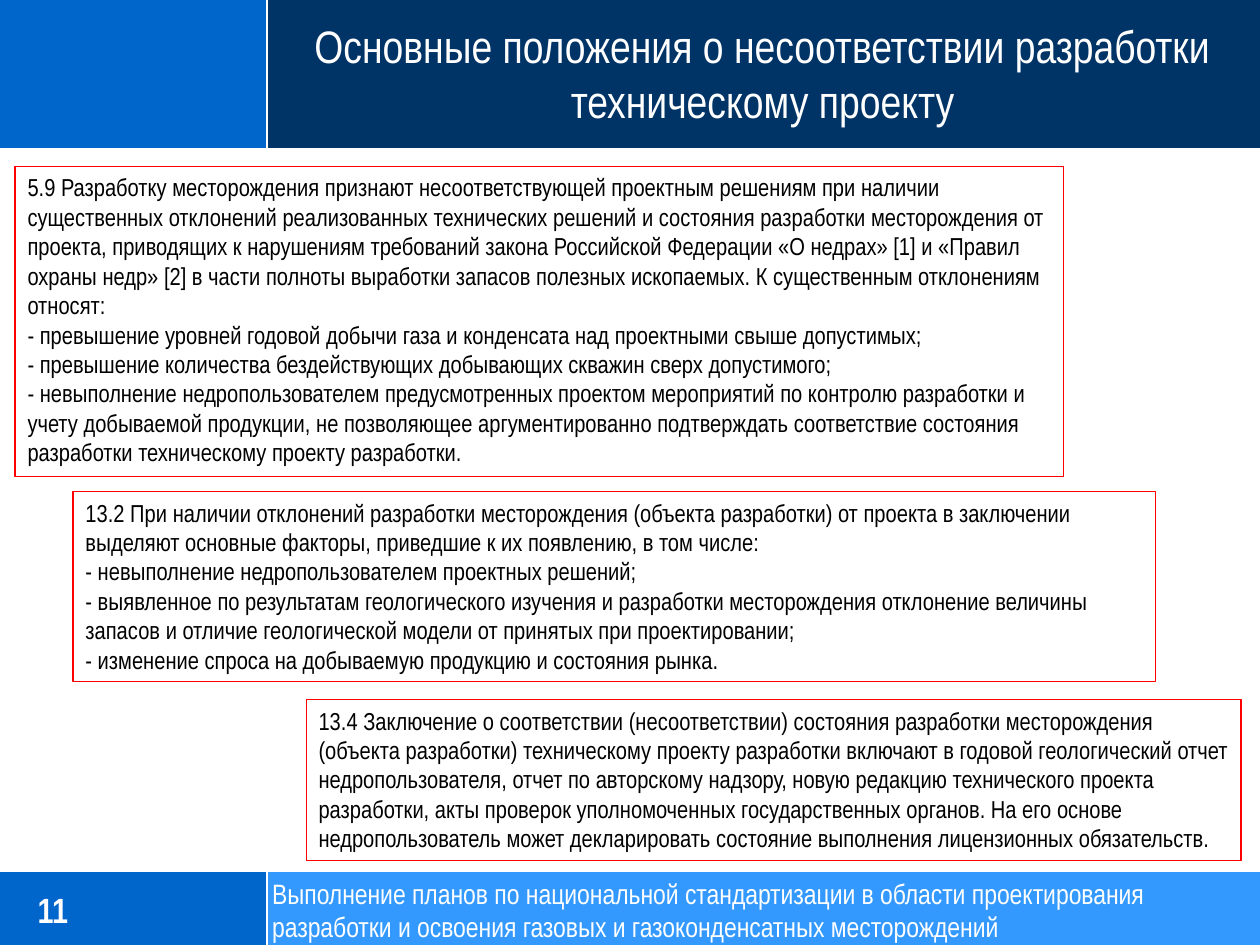
from lxml import etree
from pptx import Presentation
from pptx import util as u
from pptx.dml.color import RGBColor
from pptx.enum import shapes, text
from pptx.oxml import ns

WIDE, HIGH = 10, 7.5
SPLIT, TOP, FOOT = 2.12, 1.18, 6.91

NOTES = [
    ((0.12, 1.32, 8.32, 2.46), [
        "5.9 Разработку месторождения признают несоответствующей проектным решениям при наличии "
        "существенных отклонений реализованных технических решений и состояния разработки "
        "месторождения от проекта, приводящих к нарушениям требований закона Российской Федерации "
        "«О недрах» [1] и «Правил охраны недр» [2] в части полноты выработки запасов полезных "
        "ископаемых. К существенным отклонениям относят:",
        "- превышение уровней годовой добычи газа и конденсата над проектными свыше допустимых;",
        "- превышение количества бездействующих добывающих скважин сверх допустимого;",
        "- невыполнение недропользователем предусмотренных проектом мероприятий по контролю "
        "разработки и учету добываемой продукции, не позволяющее аргументированно подтверждать "
        "соответствие состояния разработки техническому проекту разработки.",
    ]),
    ((0.58, 3.9, 8.59, 1.51), [
        "13.2 При наличии отклонений разработки месторождения (объекта разработки) от проекта в "
        "заключении выделяют основные факторы, приведшие к их появлению, в том числе:",
        "- невыполнение недропользователем проектных решений;",
        "- выявленное по результатам геологического изучения и разработки месторождения отклонение "
        "величины запасов и отличие геологической модели от принятых при проектировании;",
        "- изменение спроса на добываемую продукцию и состояния рынка.",
    ]),
    ((2.43, 5.55, 7.42, 1.28), [
        "13.4 Заключение о соответствии (несоответствии) состояния разработки месторождения "
        "(объекта разработки) техническому проекту разработки включают в годовой геологический "
        "отчет недропользователя, отчет по авторскому надзору, новую редакцию технического проекта "
        "разработки, акты проверок уполномоченных государственных органов. На его основе "
        "недропользователь может декларировать состояние выполнения лицензионных обязательств.",
    ]),
]


def paint(part, tint):
    part.solid()
    part.fore_color.rgb = RGBColor.from_string(tint)


def write(shape, *lines, font="Arial Narrow", size=14, tint="000000", bold=False,
          align="LEFT", anchor="MIDDLE", inset=(0, 0)):
    frame = shape.text_frame
    frame.word_wrap = True
    frame.auto_size = text.MSO_AUTO_SIZE.NONE
    frame.vertical_anchor = text.MSO_ANCHOR[anchor]
    frame.margin_left = frame.margin_right = u.Inches(inset[0])
    frame.margin_top = frame.margin_bottom = u.Inches(inset[1])
    for n, line in enumerate(lines):
        para = frame.add_paragraph() if n else frame.paragraphs[0]
        para.alignment = text.PP_ALIGN[align]
        run = para.add_run()
        run.text = line
        run.font.name, run.font.size, run.font.bold = font, u.Pt(size), bold
        paint(run.font.fill, tint)


class Page:
    """Holds the style and the current slide, and adds its elements."""

    white, navy, blue, sky, red = "FFFFFF", "003366", "0066CC", "3399FF", "FF0000"

    def __init__(self, deck):
        self.slide = deck.slides.add_slide(deck.slide_layouts[5])
        self.items = self.slide.shapes
        paint(self.slide.background.fill, self.white)

    def rect(self, *box):
        shape = self.items.add_shape(shapes.MSO_SHAPE.RECTANGLE, *map(u.Inches, box))
        shape.shadow.inherit = False
        return shape

    def band(self, tint, *box):
        shape = self.rect(*box)
        paint(shape.fill, tint)
        shape.line.fill.background()

    def rule(self, *ends):
        line = self.items.add_connector(shapes.MSO_CONNECTOR.STRAIGHT, *map(u.Inches, ends))
        paint(line.line.fill, self.white)
        line.line.width = u.Pt(1.25)
        etree.SubElement(line.element.spPr, ns.qn("a:effectLst"))

    def title(self, words, *box):
        shape = self.items.title
        shape.left, shape.top, shape.width, shape.height = map(u.Inches, box)
        shape.element.getparent().append(shape.element)
        write(shape, words, size=26, tint=self.white, align="CENTER")

    def label(self, words, *box, **form):
        write(self.items.add_textbox(*map(u.Inches, box)), words, tint=self.white, **form)

    def note(self, lines, *box):
        shape = self.rect(*box)
        shape.fill.background()
        paint(shape.line.fill, self.red)
        shape.line.width = u.Pt(0.75)
        write(shape, *lines, anchor="TOP", inset=(0.1, 0.05))


def main():
    deck = Presentation()
    deck.slide_width, deck.slide_height = u.Inches(WIDE), u.Inches(HIGH)
    page = Page(deck)
    for top, end, tint in ((FOOT, HIGH, page.sky), (0, TOP, page.navy)):
        page.band(page.blue, 0, top, SPLIT, end - top)
        page.band(tint, SPLIT, top, WIDE - SPLIT, end - top)
        page.rule(SPLIT, top, SPLIT, end)
    for edge in (FOOT, TOP):
        page.rule(0, edge, WIDE, edge)
    page.title("Основные положения о несоответствии разработки техническому проекту",
               2.11, 0.14, 7.89, 0.88)
    page.label("11", 0, 6.96, 0.84, 0.52, size=20, bold=True, align="CENTER")
    for box, lines in NOTES:
        page.note(lines, *box)
    page.label("Выполнение планов по национальной стандартизации в области проектирования "
               "разработки и освоения газовых и газоконденсатных месторождений",
               2.16, 6.96, 7.59, 0.52, size=16)
    deck.save("out.pptx")


if __name__ == "__main__":
    main()
